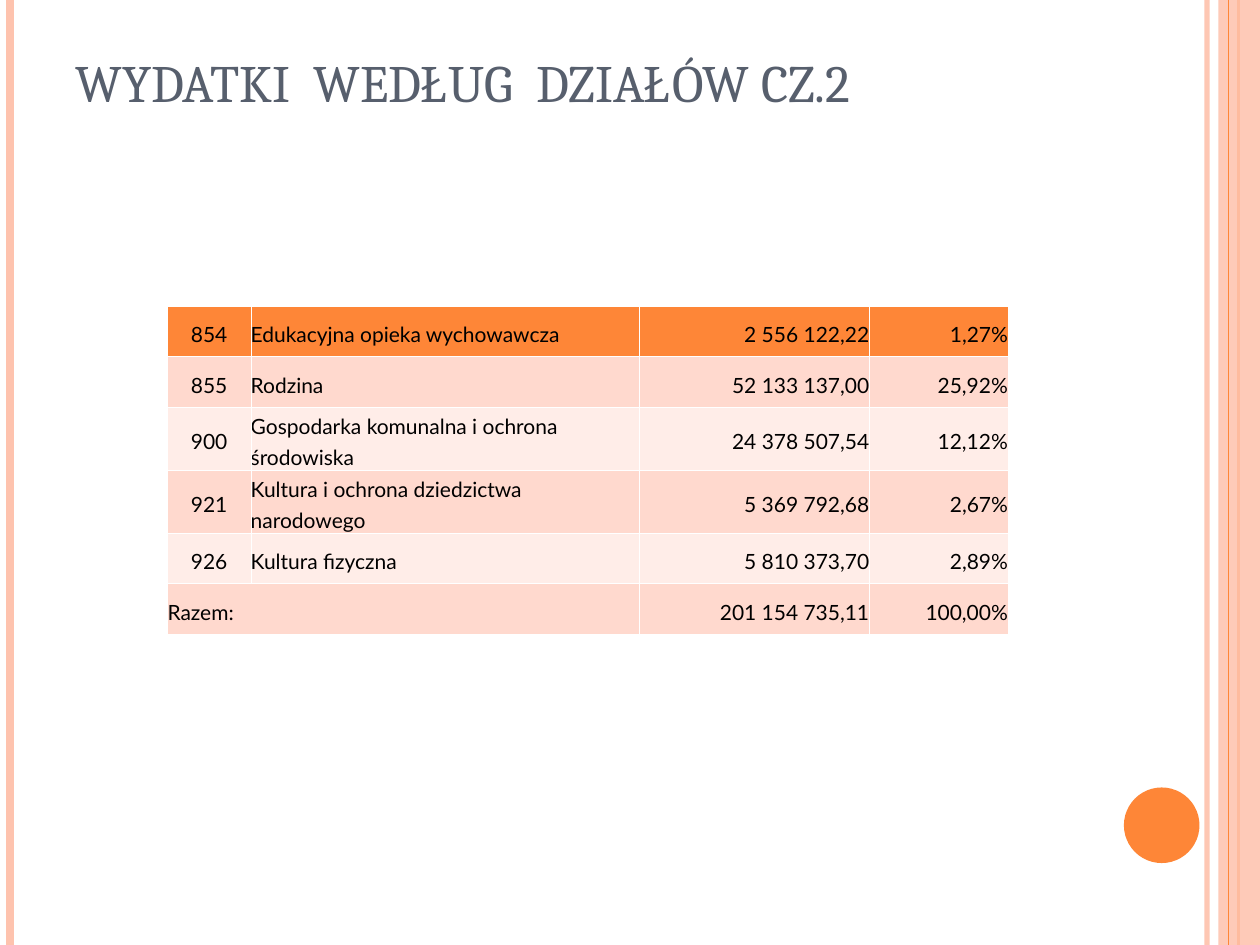
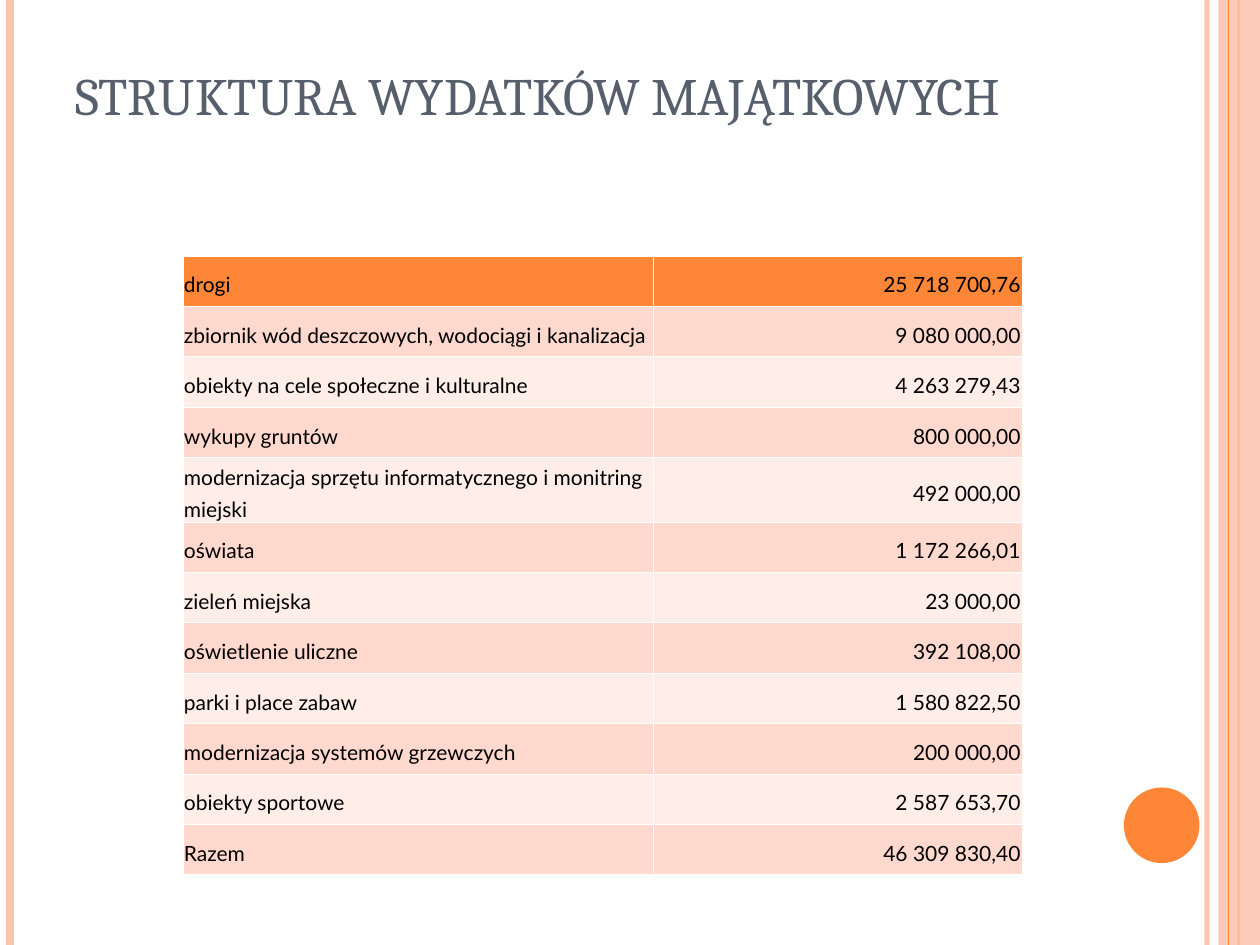
from lxml.etree import SubElement as Sub
from pptx import Presentation
from pptx.dml.color import RGBColor as RGB
from pptx.enum.shapes import MSO_CONNECTOR as Link, MSO_SHAPE as Shape
from pptx.enum.text import MSO_ANCHOR as Anchor, MSO_AUTO_SIZE as Auto, PP_ALIGN as Align
from pptx.oxml.ns import qn
from pptx.util import Inches, Pt

ORANGE, PINK = "FE8637", "FEC3AE"
BANDS = ("FFD9CE", "FFEDE8")
SLATE, BLACK, WHITE = "575F6D", "000000", "FFFFFF"
HEAD, BODY = "Cambria", "Lato"
LEFT, MID, RIGHT = Align.LEFT, Align.CENTER, Align.RIGHT

PARTS = [
    ("854", "Edukacyjna opieka wychowawcza", "2 556 122,22", "1,27%"),
    ("855", "Rodzina", "52 133 137,00", "25,92%"),
    ("900", "Gospodarka komunalna i ochrona środowiska", "24 378 507,54", "12,12%"),
    ("921", "Kultura i ochrona dziedzictwa narodowego", "5 369 792,68", "2,67%"),
    ("926", "Kultura fizyczna", "5 810 373,70", "2,89%"),
    ("Razem:", "", "201 154 735,11", "100,00%"),
]
ASSETS = [
    ("drogi", "25 718 700,76"),
    ("zbiornik wód deszczowych, wodociągi i kanalizacja", "9 080 000,00"),
    ("obiekty na cele społeczne i kulturalne", "4 263 279,43"),
    ("wykupy gruntów", "800 000,00"),
    ("modernizacja sprzętu informatycznego i monitring miejski", "492 000,00"),
    ("oświata", "1 172 266,01"),
    ("zieleń miejska", "23 000,00"),
    ("oświetlenie uliczne", "392 108,00"),
    ("parki i place zabaw", "1 580 822,50"),
    ("modernizacja systemów grzewczych", "200 000,00"),
    ("obiekty sportowe", "2 587 653,70"),
    ("Razem", "46 309 830,40"),
]


def paint(fmt, color, alpha=100):
    fmt.solid()
    fmt.fore_color.rgb = RGB.from_string(color)
    return alpha


def fade(shape, tag, alpha):
    for node in shape.element.spPr.iter(qn(tag)):
        for color in node.iter(qn("a:srgbClr")):
            Sub(color, qn("a:alpha"), val=str(alpha * 1000))


def write(frame, text, size=12, font=BODY, color=BLACK, align=LEFT, space=1.0):
    para = frame.paragraphs[0]
    para.alignment = align
    para.line_spacing = space
    para.space_before = Pt(0)
    run = para.add_run()
    run.text = text
    run.font.size = Pt(size)
    run.font.name = font
    run.font.bold = False
    run.font.color.rgb = RGB.from_string(color)


class Deck:
    def __init__(self):
        self.show = Presentation()
        self.show.slide_width = Inches(10)
        self.show.slide_height = Inches(7.5)
        self.slide = None

    def page(self, title, height, inset):
        self.slide = self.show.slides.add_slide(self.show.slide_layouts[5])
        self.rule(9.58, PINK, 3, 93)
        self.rule(0.08, PINK, 4.5)
        self.rule(9.83, ORANGE, 1.5)
        self.block(Shape.RECTANGLE, (9.67, 0, 0.33, 7.5), PINK, 87)
        self.rule(9.75, ORANGE, 0.75)
        self.block(Shape.OVAL, (8.92, 6.25, 0.6, 0.6), ORANGE)
        self.title(title, height, inset)

    def title(self, text, height, inset):
        box = self.slide.shapes.title
        box.left, box.top = Inches(0.5), Inches(0.3)
        box.width, box.height = Inches(8.17), Inches(height)
        frame = box.text_frame
        frame.word_wrap = True
        frame.auto_size = Auto.NONE
        frame.vertical_anchor = Anchor.BOTTOM
        frame.margin_bottom = Inches(inset)
        write(frame, text, size=30, font=HEAD, color=SLATE)

    def rule(self, left, color, width, alpha=100):
        line = self.slide.shapes.add_connector(
            Link.STRAIGHT, Inches(left), 0, Inches(left), Inches(7.5))
        line.line.width = Pt(width)
        paint(line.line.fill, color)
        if alpha < 100:
            fade(line, "a:ln", alpha)
        Sub(line.element.spPr, qn("a:effectLst"))

    def block(self, kind, spot, color, alpha=100):
        shape = self.slide.shapes.add_shape(kind, *map(Inches, spot))
        shape.shadow.inherit = False
        shape.line.fill.background()
        paint(shape.fill, color)
        if alpha < 100:
            fade(shape, "a:solidFill", alpha)

    def edge(self, cell, row):
        props = cell._tc.get_or_add_tcPr()
        for side in "LRTB":
            thick = (row, side) in ((0, "B"), (1, "T"))
            line = Sub(props, qn("a:ln" + side), w=str(Pt(0.17 if thick else 0.06)))
            fill = Sub(line, qn("a:solidFill"))
            Sub(fill, qn("a:srgbClr"), val=WHITE)

    def table(self, rows, left, top, cols, aligns, tall, inset=0):
        highs = [0.5 if i in tall else 0.4 for i in range(len(rows))]
        grid = self.slide.shapes.add_table(
            len(rows), len(cols), Inches(left), Inches(top),
            Inches(sum(cols)), Inches(sum(highs))).table
        for col, width in zip(grid.columns, cols):
            col.width = Inches(width)
        for i, (texts, high) in enumerate(zip(rows, highs)):
            grid.rows[i].height = Inches(high)
            for j, (text, align) in enumerate(zip(texts, aligns)):
                cell = grid.cell(i, j)
                self.edge(cell, i)
                paint(cell.fill, BANDS[(i - 1) % 2] if i else ORANGE)
                cell.vertical_anchor = Anchor.MIDDLE
                cell.margin_left = cell.margin_right = cell.margin_top = Inches(inset)
                cell.margin_bottom = 0
                if text:
                    whole = "" in texts and j == 0
                    write(cell.text_frame, text, align=LEFT if whole else align, space=1.25)
                else:
                    grid.cell(i, j - 1).merge(cell)


def main():
    deck = Deck()
    deck.page("WYDATKI  WEDŁUG  DZIAŁÓW CZ.2", 0.65, 0.05)
    deck.table(PARTS, 1.33, 2.43, (0.66, 3.08, 1.83, 1.1),
               (MID, LEFT, RIGHT, RIGHT), (2, 3))
    deck.page("STRUKTURA WYDATKÓW MAJĄTKOWYCH", 1.25, 0.55)
    deck.table(ASSETS, 1.45, 2.03, (3.73, 2.93), (LEFT, RIGHT), (4,), 0.01)
    deck.show.save("out.pptx")


if __name__ == "__main__":
    main()
